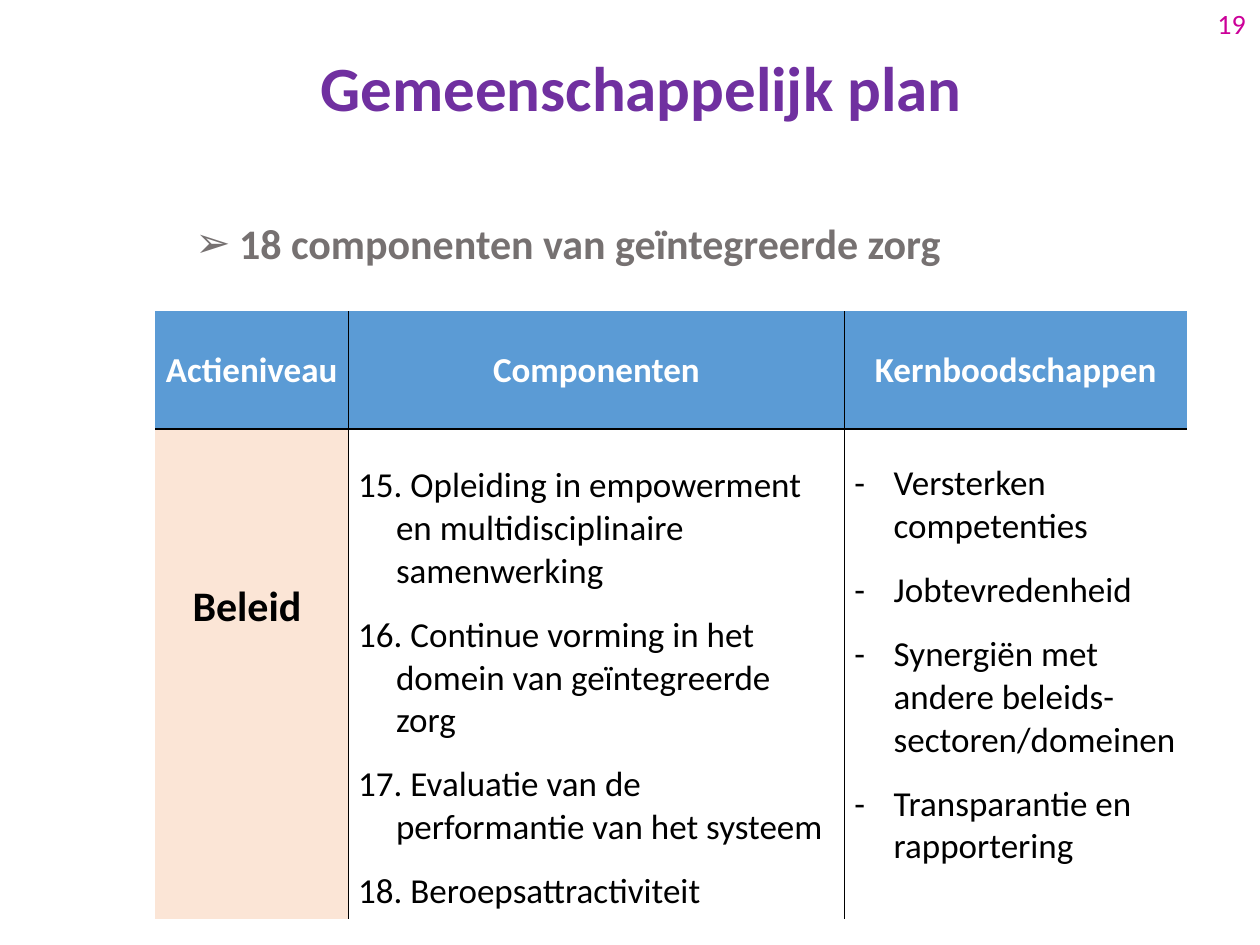
from lxml import etree
from pptx import Presentation
from pptx.dml.color import RGBColor
from pptx.enum.text import MSO_ANCHOR, MSO_AUTO_SIZE, PP_ALIGN
from pptx.oxml.ns import qn
from pptx.util import Pt

COLORS = {
    "title": "7030A0", "subtitle": "767171", "number": "CC0099",
    "header": "5B9BD5", "level": "FBE5D6", "white": "FFFFFF", "black": "000000",
}
TITLE = "Gemeenschappelijk plan"
SUBTITLE = "18 componenten van geïntegreerde zorg"
PAGE_NUMBER = "19"
HEADERS = ["Actieniveau", "Componenten", "Kernboodschappen"]
LEVEL = "Beleid "
COMPONENTS = [
    "15. Opleiding in empowerment en multidisciplinaire samenwerking",
    "16. Continue vorming in het domein van geïntegreerde zorg",
    "17. Evaluatie van de performantie van het systeem",
    "18. Beroepsattractiviteit",
]
MESSAGES = [
    "Versterken competenties",
    "Jobtevredenheid",
    "Synergiën met andere beleids-sectoren/domeinen",
    "Transparantie en rapportering",
]
COL_WIDTHS = [110.5, 283.5, 195.7]
ROW_HEIGHTS = [67.5, 279.4]
TABLE_LEFT, TABLE_TOP = 88.6, 177.8


def rgb(name):
    return RGBColor.from_string(COLORS[name])


def write(tf, texts, size=20, color="black", bold=False, align=PP_ALIGN.LEFT,
          line=1.0, before=0, after=0, hang=0, bullet=None):
    """Fill a text frame with one paragraph per text; hang is the hanging indent."""
    tf.word_wrap = True
    for i, text in enumerate(texts):
        p = tf.add_paragraph() if i else tf.paragraphs[0]
        pPr = p._p.get_or_add_pPr()
        pPr.set("marL", str(Pt(hang)))
        pPr.set("indent", str(-Pt(hang)))
        if bullet:
            etree.SubElement(pPr, qn("a:buFont"), typeface="Calibri")
            etree.SubElement(pPr, qn("a:buChar"), char=bullet)
        else:
            etree.SubElement(pPr, qn("a:buNone"))
        p.alignment = align
        p.line_spacing = line
        p.space_before = Pt(before if i else 0)
        p.space_after = Pt(after)
        r = p.add_run()
        r.text = text
        r.font.name = "Calibri"
        r.font.size = Pt(size)
        r.font.bold = bold
        r.font.color.rgb = rgb(color)


def place(sp, left, top, width, height):
    sp.left, sp.top, sp.width, sp.height = Pt(left), Pt(top), Pt(width), Pt(height)
    sp.text_frame.auto_size = MSO_AUTO_SIZE.NONE


def set_borders(cell, shown):
    """Draw a 1 pt black line on the shown sides (letters of LRTB), none elsewhere."""
    tcPr = cell._tc.get_or_add_tcPr()
    for side in "LRTB":
        ln = etree.SubElement(tcPr, qn(f"a:ln{side}"), w=str(Pt(1)))
        if side in shown:
            fill = etree.SubElement(ln, qn("a:solidFill"))
            etree.SubElement(fill, qn("a:srgbClr"), val=COLORS["black"])
        else:
            etree.SubElement(ln, qn("a:noFill"))


def add_plan_table(slide):
    rows, cols = len(ROW_HEIGHTS), len(COL_WIDTHS)
    table = slide.shapes.add_table(
        rows, cols, Pt(TABLE_LEFT), Pt(TABLE_TOP),
        Pt(sum(COL_WIDTHS)), Pt(sum(ROW_HEIGHTS))).table
    table.horz_banding = False
    for col, width in zip(table.columns, COL_WIDTHS):
        col.width = Pt(width)
    for row, height in zip(table.rows, ROW_HEIGHTS):
        row.height = Pt(height)

    fills = [["header"] * cols, ["level", "white", "white"]]
    top_margins = [[3.6] * cols, [87, 20, 19]]
    for i in range(rows):
        for j in range(cols):
            cell = table.cell(i, j)
            shown = ("L" if j else "") + ("R" if j < cols - 1 else "")
            set_borders(cell, shown + ("T" if i else "B"))
            cell.fill.solid()
            cell.fill.fore_color.rgb = rgb(fills[i][j])
            cell.margin_left = cell.margin_right = Pt(5.6)
            cell.margin_top, cell.margin_bottom = Pt(top_margins[i][j]), Pt(3.6)

    for j, text in enumerate(HEADERS):
        cell = table.cell(0, j)
        cell.vertical_anchor = MSO_ANCHOR.MIDDLE
        write(cell.text_frame, [text], color="white", bold=True, align=PP_ALIGN.CENTER)
    level, components, messages = table.rows[1].cells
    write(level.text_frame, [LEVEL], size=24, bold=True, align=PP_ALIGN.CENTER)
    write(components.text_frame, COMPONENTS, before=6, after=6, hang=21.6)
    write(messages.text_frame, MESSAGES, before=6, after=6, hang=22.5, bullet="-")


def main():
    prs = Presentation()
    prs.slide_width, prs.slide_height = Pt(720), Pt(540)
    slide = prs.slides.add_slide(prs.slide_layouts[1])

    title, body = slide.placeholders
    place(title, 153.4, 0, 426.2, 103.7)
    title.text_frame.vertical_anchor = MSO_ANCHOR.MIDDLE
    write(title.text_frame, [TITLE], size=36, color="title", bold=True,
          align=PP_ALIGN.CENTER, line=0.9)
    place(body, 104.4, 123.8, 606.2, 265)
    write(body.text_frame, [SUBTITLE], size=24, color="subtitle", bold=True,
          line=0.9, after=24, hang=25, bullet="➢")

    add_plan_table(slide)

    number = slide.shapes.add_textbox(0, 0, 0, 0)
    place(number, 687.6, 0, 32.4, 28.8)
    write(number.text_frame, [PAGE_NUMBER], size=16, color="number",
          align=PP_ALIGN.CENTER)
    prs.save("out.pptx")


if __name__ == "__main__":
    main()
